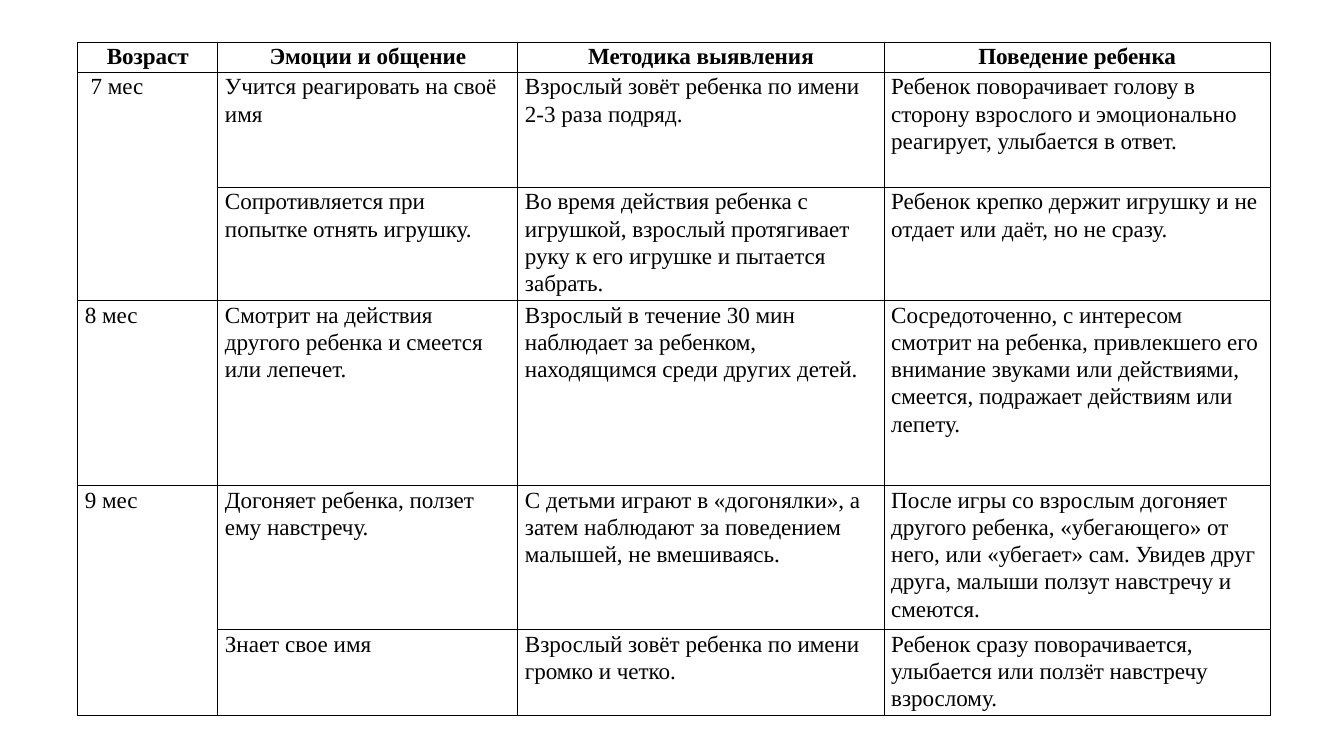
from lxml import etree
from pptx import Presentation
from pptx.dml.color import RGBColor
from pptx.enum.text import MSO_ANCHOR, PP_ALIGN
from pptx.oxml.ns import qn
from pptx.util import Cm, Pt

LEFT, CENTER = PP_ALIGN.LEFT, PP_ALIGN.CENTER
TOP = MSO_ANCHOR.TOP

COLUMN_WIDTHS = [3.53, 7.56, 9.23, 9.73]
ROW_HEIGHTS = [0.76, 2.9, 2.85, 4.66, 3.63, 2.16]
AGE_SPANS = [(1, 2), (4, 5)]
ROWS = [
    ["Возраст", "Эмоции и общение", "Методика выявления", "Поведение ребенка"],
    [" 7 мес", "Учится реагировать на своё имя",
     "Взрослый зовёт ребенка по имени 2-3 раза подряд.",
     "Ребенок поворачивает голову в сторону взрослого и эмоционально "
     "реагирует, улыбается в ответ."],
    ["", "Сопротивляется при попытке отнять игрушку.",
     "Во время действия ребенка с игрушкой, взрослый протягивает руку "
     "к его игрушке и пытается забрать.",
     "Ребенок крепко держит игрушку и не отдает или даёт, но не сразу."],
    ["8 мес", "Смотрит на действия другого ребенка и смеется или лепечет.",
     "Взрослый в течение 30 мин наблюдает за ребенком, находящимся "
     "среди других детей.",
     "Сосредоточенно, с интересом смотрит на ребенка, привлекшего его внимание "
     "звуками или действиями, смеется, подражает действиям или лепету."],
    ["9 мес", "Догоняет ребенка, ползет ему навстречу.",
     "С детьми играют в «догонялки», а затем наблюдают за поведением "
     "малышей, не вмешиваясь.",
     "После игры со взрослым догоняет другого ребенка, «убегающего» от него, "
     "или «убегает» сам. Увидев друг друга, малыши ползут навстречу и смеются."],
    ["", "Знает свое имя",
     "Взрослый зовёт ребенка по имени громко и четко.",
     "Ребенок сразу поворачивается, улыбается или ползёт навстречу взрослому."],
]


def color(hex_value):
    return RGBColor.from_string(hex_value)


class TableSlide:
    font_name = "Times New Roman"
    font_size = 16.5
    line_spacing = 1.07
    ink = "000000"
    paper = "FFFFFF"
    border_width = 1
    side_margin = 0.18

    def __init__(self, presentation):
        self.slide = presentation.slides.add_slide(presentation.slide_layouts[6])

    def add_table(self, left, top, widths, heights, rows, spans):
        frame = self.slide.shapes.add_table(
            len(rows), len(widths), Cm(left), Cm(top),
            Cm(sum(widths)), Cm(sum(heights)))
        table = frame.table
        table.first_row = False
        table.horz_banding = False
        for column, width in zip(table.columns, widths):
            column.width = Cm(width)
        for row, height in zip(table.rows, heights):
            row.height = Cm(height)
        for row_index, texts in enumerate(rows):
            for column_index, text in enumerate(texts):
                self.fill_cell(table.cell(row_index, column_index), text,
                               header=row_index == 0)
        for first, last in spans:
            table.cell(first, 0).merge(table.cell(last, 0))

    def fill_cell(self, cell, text, header):
        cell.margin_left = cell.margin_right = Cm(self.side_margin)
        cell.margin_top = cell.margin_bottom = 0
        cell.vertical_anchor = TOP
        self.add_borders(cell)
        cell.fill.solid()
        cell.fill.fore_color.rgb = color(self.paper)
        cell.text = text
        paragraph = cell.text_frame.paragraphs[0]
        paragraph.alignment = CENTER if header else LEFT
        paragraph.line_spacing = self.line_spacing
        paragraph.font.name = self.font_name
        paragraph.font.size = Pt(self.font_size)
        paragraph.font.bold = header
        paragraph.font.color.rgb = color(self.ink)

    def add_borders(self, cell):
        properties = cell._tc.get_or_add_tcPr()
        for side in ("a:lnL", "a:lnR", "a:lnT", "a:lnB"):
            line = etree.SubElement(properties, qn(side),
                                    w=str(Pt(self.border_width)))
            fill = etree.SubElement(line, qn("a:solidFill"))
            etree.SubElement(fill, qn("a:srgbClr"), val=self.ink)


def main():
    presentation = Presentation()
    presentation.slide_width = Cm(33.87)
    presentation.slide_height = Cm(19.05)
    TableSlide(presentation).add_table(
        1.96, 1.07, COLUMN_WIDTHS, ROW_HEIGHTS, ROWS, AGE_SPANS)
    presentation.save("out.pptx")


if __name__ == "__main__":
    main()
